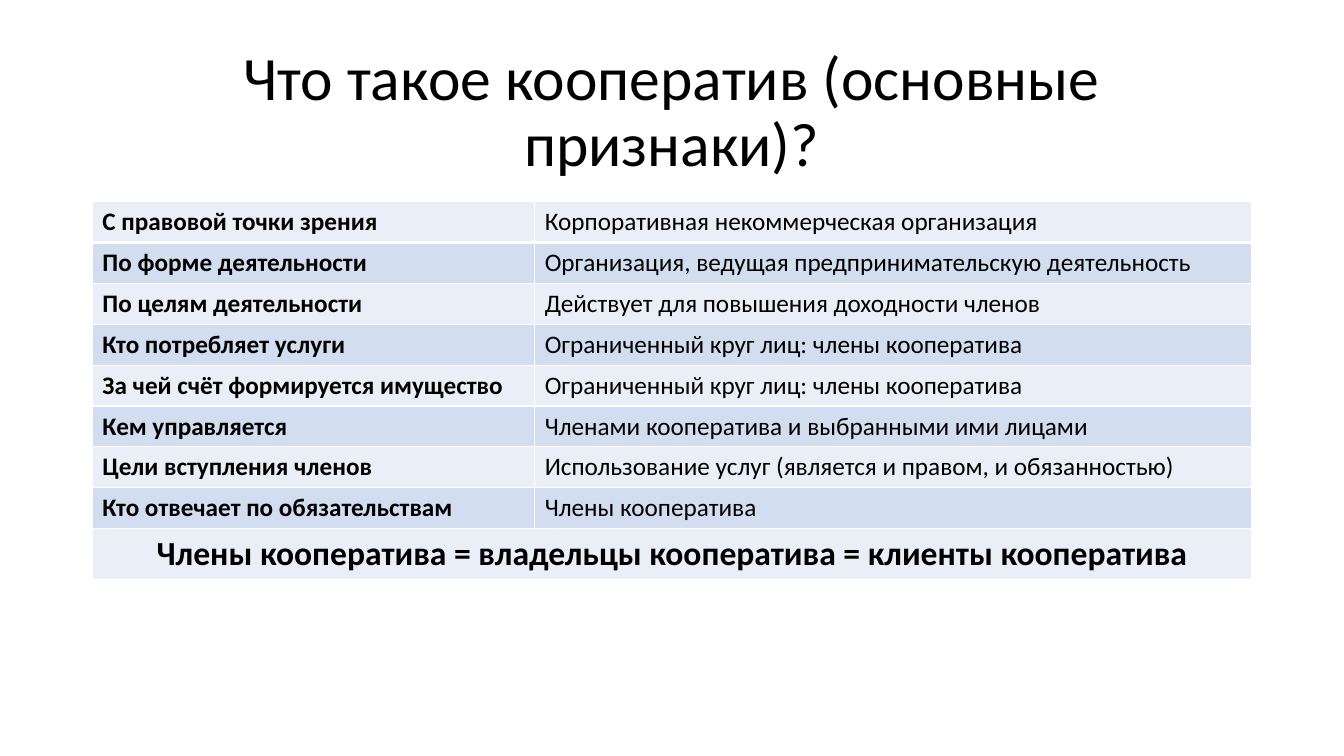
from dataclasses import dataclass

from lxml import etree
from pptx import Presentation
from pptx.dml.color import RGBColor
from pptx.enum import text
from pptx.oxml import ns
from pptx.util import Pt

# Content
TITLE = "Что такое кооператив (основные признаки)?"
FEATURES = [
    ("С правовой точки зрения", "Корпоративная некоммерческая организация"),
    ("По форме деятельности", "Организация, ведущая предпринимательскую деятельность"),
    ("По целям деятельности", "Действует для повышения доходности членов"),
    ("Кто потребляет услуги", "Ограниченный круг лиц: члены кооператива"),
    ("За чей счёт формируется имущество", "Ограниченный круг лиц: члены кооператива"),
    ("Кем управляется", "Членами кооператива и выбранными ими лицами"),
    ("Цели вступления членов", "Использование услуг (является и правом, и обязанностью)"),
    ("Кто отвечает по обязательствам", "Члены кооператива"),
]
SUMMARY = "Члены кооператива = владельцы кооператива = клиенты кооператива"


@dataclass(frozen=True)
class Theme:
    font: str = "Calibri"
    ink: str = "000000"
    rule: str = "FFFFFF"
    bands: tuple = ("EAEFF7", "D2DEEF")
    title: int = 44
    body: int = 18
    summary: int = 24


T = Theme()

# Layout, in points
SLIDE_W, SLIDE_H = 960, 540
LEFT, WIDTH = 66, 828
TITLE_TOP, TITLE_H = 28.75, 104.4
TABLE_TOP, ROW_H, SUMMARY_H = 144, 29.2, 36
COLUMNS = (316, WIDTH - 316)


def style(p, size, bold=False, align=text.PP_ALIGN.LEFT):
    p.alignment = align
    for r in p.runs:
        r.font.name = T.font
        r.font.size = Pt(size)
        r.font.bold = bold
        r.font.color.rgb = RGBColor.from_string(T.ink)


def add_borders(cell, bottom, top):
    tcPr = cell._tc.get_or_add_tcPr()
    widths = {"lnL": 1, "lnR": 1, "lnT": top, "lnB": bottom}
    for i, (side, width) in enumerate(widths.items()):
        ln = etree.Element(ns.qn("a:" + side), w=str(Pt(width)))
        fill = etree.SubElement(ln, ns.qn("a:solidFill"))
        etree.SubElement(fill, ns.qn("a:srgbClr"), val=T.rule)
        tcPr.insert(i, ln)


def add_title(s):
    sp = s.shapes.title
    sp.left, sp.top, sp.width, sp.height = map(Pt, (LEFT, TITLE_TOP, WIDTH, TITLE_H))
    tf = sp.text_frame
    tf.text = TITLE
    tf.word_wrap = True
    tf.auto_size = text.MSO_AUTO_SIZE.NONE
    tf.vertical_anchor = text.MSO_ANCHOR.MIDDLE
    p = tf.paragraphs[0]
    p.line_spacing = 0.9
    p.space_before = Pt(0)
    style(p, T.title, align=text.PP_ALIGN.CENTER)


def add_features(s):
    rows = FEATURES + [(SUMMARY, "")]
    last = len(rows) - 1
    height = ROW_H * last + SUMMARY_H
    tbl = s.shapes.add_table(len(rows), len(COLUMNS), Pt(LEFT), Pt(TABLE_TOP),
                             Pt(WIDTH), Pt(height)).table
    tbl.first_row = False
    for column, width in zip(tbl.columns, COLUMNS):
        column.width = Pt(width)

    # Banded rows, with a heavier rule under the first
    for i, row in enumerate(rows):
        tbl.rows[i].height = Pt(SUMMARY_H if i == last else ROW_H)
        for j, words in enumerate(row):
            cell = tbl.cell(i, j)
            cell.fill.solid()
            cell.fill.fore_color.rgb = RGBColor.from_string(T.bands[i % 2])
            add_borders(cell, bottom=3 if i == 0 else 1, top=3 if i == 1 else 1)
            if words:
                cell.text_frame.text = words
                style(cell.text_frame.paragraphs[0], T.body, bold=j == 0)

    # Summary row across both columns
    summary = tbl.cell(last, 0)
    summary.merge(tbl.cell(last, 1))
    style(summary.text_frame.paragraphs[0], T.summary, True, text.PP_ALIGN.CENTER)


def main():
    prs = Presentation()
    prs.slide_width, prs.slide_height = Pt(SLIDE_W), Pt(SLIDE_H)
    s = prs.slides.add_slide(prs.slide_layouts[5])
    add_title(s)
    add_features(s)
    prs.save("out.pptx")


if __name__ == "__main__":
    main()
